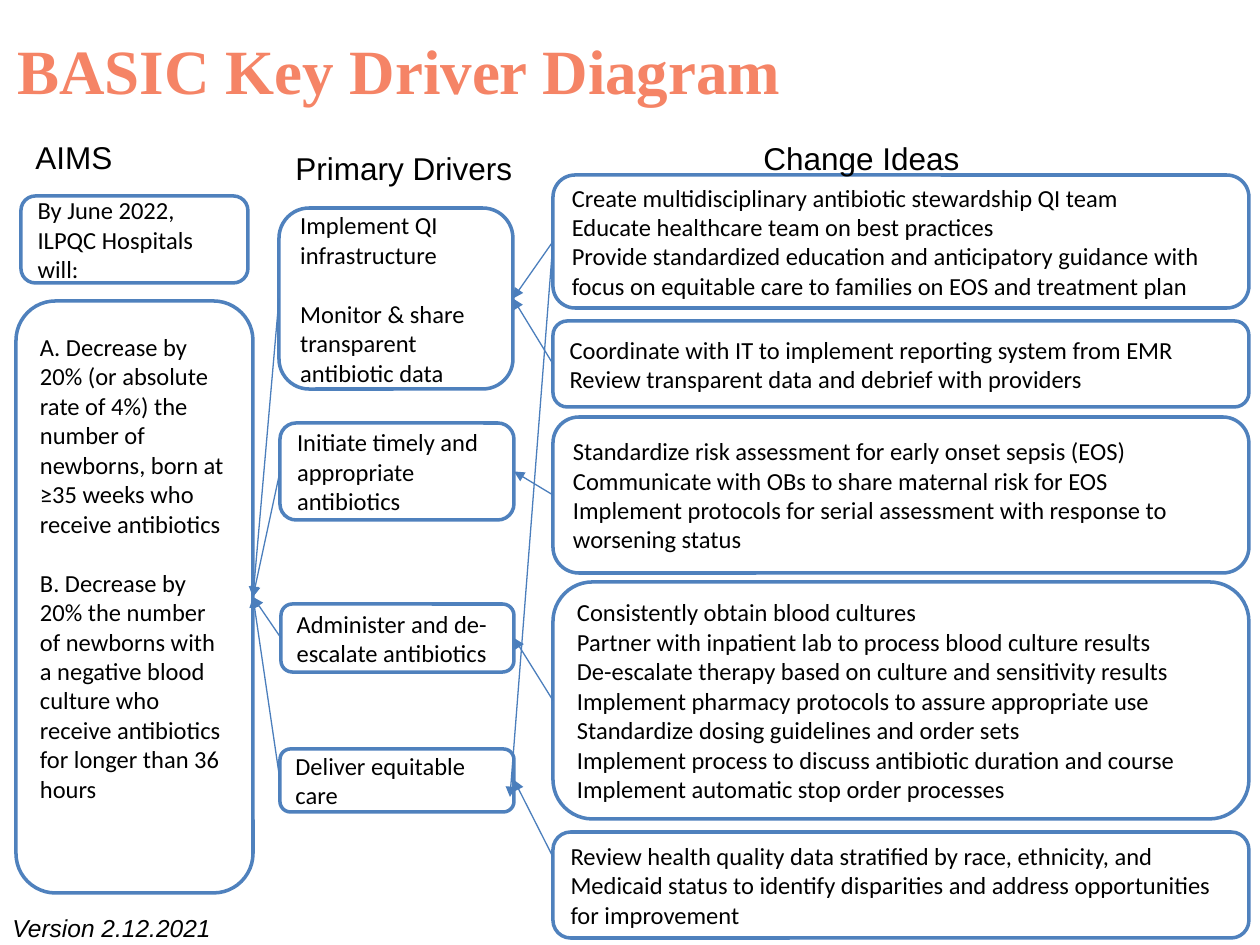
from lxml.etree import SubElement as Sub
from pptx import Presentation
from pptx.dml.color import RGBColor as Rgb
from pptx.enum.shapes import MSO_CONNECTOR as Link, MSO_SHAPE as Shape
from pptx.enum.text import MSO_ANCHOR as Anchor, PP_ALIGN as Align
from pptx.oxml.ns import qn
from pptx.util import Emu, Pt

PX = 7257
THEME = {
    "title": {"font": "Times New Roman", "size": 36, "color": "F58466", "bold": True},
    "head": {"font": "Arial", "size": 18, "color": "000000"},
    "note": {"font": "Arial", "size": 14, "color": "000000", "italic": True},
    "body": {"font": "Calibri", "size": 14, "color": "000000"},
    "fill": "FFFFFF", "edge": "4F81BD", "arrow": "4B7EBC",
    "border": 2, "thin": 0.75, "gap": 17,
}

LABELS = [
    ("BASIC Key Driver Diagram", "title", (5, 5, 1134, 129), Anchor.MIDDLE),
    ("AIMS", "head", (23, 132, 276, 50), Anchor.TOP),
    ("Primary Drivers", "head", (283, 143, 276, 50), Anchor.TOP),
    ("Change Ideas", "head", (751, 133, 276, 50), Anchor.TOP),
    ("Version 2.12.2021", "note", (0, 907, 357, 38), Anchor.TOP),
]
GOAL = (["By June 2022, ILPQC Hospitals will:"], (21, 196, 227, 87))
AIMS = ([
    "A. Decrease by 20% (or absolute rate of 4%) the number of newborns, "
    "born at ≥35 weeks who receive antibiotics",
    "B. Decrease by 20% the number of newborns with a negative blood culture "
    "who receive antibiotics for longer than 36 hours",
], (16, 301, 237, 592))
DRIVERS = [
    (["Implement QI infrastructure",
      "Monitor & share transparent antibiotic data"], (279, 208, 234, 181)),
    (["Initiate timely and appropriate antibiotics"], (280, 423, 234, 97)),
    (["Administer and de-escalate antibiotics"], (281, 604, 233, 68)),
    (["Deliver equitable care"], (280, 749, 234, 63)),
]
IDEA_X, IDEA_W = 553, 696
IDEAS = [
    (["Create multidisciplinary antibiotic stewardship QI team",
      "Educate healthcare team on best practices",
      "Provide standardized education and anticipatory guidance with focus on "
      "equitable care to families on EOS and treatment plan"], 175, 133),
    (["Coordinate with IT to implement reporting system from EMR",
      "Review transparent data and debrief with providers"], 321, 86),
    (["Standardize risk assessment for early onset sepsis (EOS)",
      "Communicate with OBs to share maternal risk for EOS",
      "Implement protocols for serial assessment with response to "
      "worsening status"], 417, 156),
    (["Consistently obtain blood cultures",
      "Partner with inpatient lab to process blood culture results",
      "De-escalate therapy based on culture and sensitivity results",
      "Implement pharmacy protocols to assure appropriate use",
      "Standardize dosing guidelines and order sets",
      "Implement process to discuss antibiotic duration and course",
      "Implement automatic stop order processes"], 582, 237),
    (["Review health quality data stratified by race, ethnicity, and Medicaid "
      "status to identify disparities and address opportunities for "
      "improvement"], 832, 106),
]
GLUED = [(0, 0), (1, 0), (2, 1), (3, 2)]
LOOSE = [((553, 857), (514, 780)), ((553, 242), (510, 797))]
LEFT, RIGHT = 1, 3


def px(*nums):
    return [Emu(n * PX) for n in nums]


def write(frame, lines, look, anchor, gap=0):
    frame.word_wrap = True
    frame.vertical_anchor = anchor
    frame.text = "\n".join(lines)
    for i, para in enumerate(frame.paragraphs):
        para.alignment = Align.LEFT
        if i and gap:
            para.space_before = Pt(gap)
        for run in para.runs:
            font = run.font
            font.name, font.size = look["font"], Pt(look["size"])
            font.color.rgb = Rgb.from_string(look["color"])
            font.bold = look.get("bold", False)
            font.italic = look.get("italic", False)


def add_box(slide, lines, area, gap=0):
    box = slide.shapes.add_shape(Shape.ROUNDED_RECTANGLE, *px(*area))
    box.shadow.inherit = False
    box.fill.solid()
    box.fill.fore_color.rgb = Rgb.from_string(THEME["fill"])
    box.line.color.rgb = Rgb.from_string(THEME["edge"])
    box.line.width = Pt(THEME["border"])
    write(box.text_frame, lines, THEME["body"], Anchor.MIDDLE, gap)
    return box


def add_arrow(slide, start=(0, 0), end=(0, 0)):
    arrow = slide.shapes.add_connector(Link.STRAIGHT, *px(*start, *end))
    arrow.line.color.rgb = Rgb.from_string(THEME["arrow"])
    arrow.line.width = Pt(THEME["thin"])
    Sub(arrow.line._get_or_add_ln(), qn("a:tailEnd"), type="triangle")
    Sub(arrow._element.spPr, qn("a:effectLst"))
    return arrow


def glue(slide, start, end):
    arrow = add_arrow(slide)
    arrow.begin_connect(start, LEFT)
    arrow.end_connect(end, RIGHT)


def main():
    deck = Presentation()
    deck.slide_width, deck.slide_height = px(1260, 945)
    slide = deck.slides.add_slide(deck.slide_layouts[6])

    add_box(slide, *GOAL)
    aims = add_box(slide, *AIMS, THEME["gap"])
    aims.text_frame.margin_bottom = px(65)[0]
    drivers = [add_box(slide, *item, THEME["gap"]) for item in DRIVERS]
    ideas = [add_box(slide, lines, (IDEA_X, top, IDEA_W, high))
             for lines, top, high in IDEAS]

    for text, look, area, anchor in LABELS:
        label = slide.shapes.add_textbox(*px(*area))
        write(label.text_frame, [text], THEME[look], anchor)

    for idea, driver in GLUED:
        glue(slide, ideas[idea], drivers[driver])
    for driver in drivers:
        glue(slide, driver, aims)
    for start, end in LOOSE:
        add_arrow(slide, start, end)

    deck.save("out.pptx")


if __name__ == "__main__":
    main()
